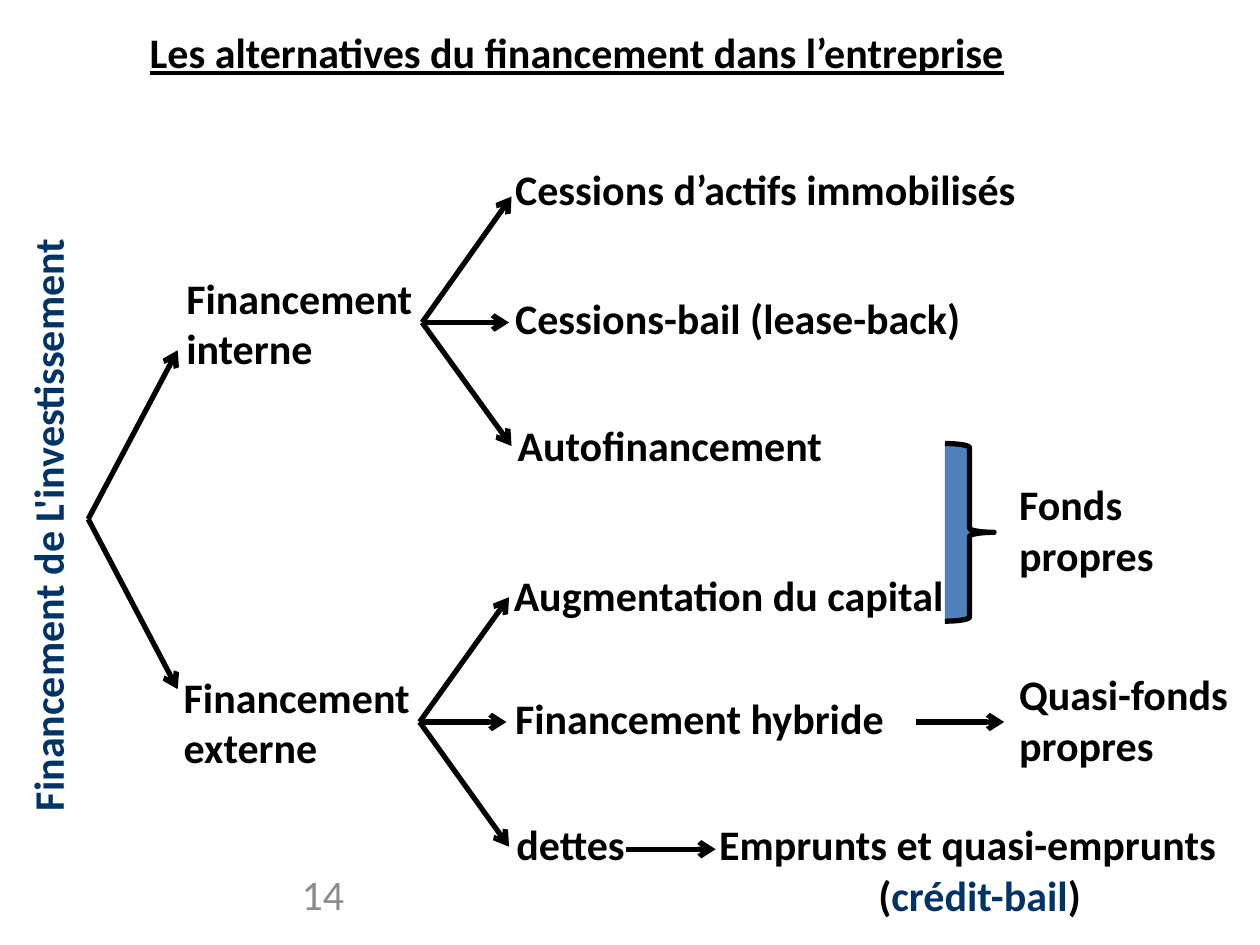
from dataclasses import dataclass
from lxml.etree import SubElement
from pptx import Presentation
from pptx.dml.color import RGBColor
from pptx.enum.shapes import MSO_CONNECTOR, MSO_SHAPE
from pptx.enum.text import MSO_ANCHOR, MSO_AUTO_SIZE, PP_ALIGN
from pptx.oxml.ns import qn
from pptx.util import Pt

SCALE = 9144
BLACK, NAVY, GRAY, BLUE = "000000", "003366", "8C8C8C", "4F81BD"
LEFT, MID, RIGHT = PP_ALIGN.LEFT, PP_ALIGN.CENTER, PP_ALIGN.RIGHT


@dataclass(frozen=True)
class Run:
    """A piece of text in one colour."""
    text: str
    color: str = BLACK


@dataclass(frozen=True)
class Para:
    """A line of runs with its alignment."""
    runs: tuple[Run, ...]
    align: PP_ALIGN = LEFT


@dataclass(frozen=True)
class Label:
    """A text box with its place and style."""
    x: int
    y: int
    w: int
    h: int
    paras: tuple[Para, ...]
    wrap: bool = True
    bold: bool = True
    under: bool = False
    turn: int = 0
    grow: bool = True
    anchor: MSO_ANCHOR = MSO_ANCHOR.TOP


@dataclass(frozen=True)
class Fan:
    """Arrows that leave one root for several tips."""
    root: tuple[int, int]
    tips: tuple[tuple[int, int], ...]


def px(n: int) -> int:
    """Turn px into EMU."""
    return n * SCALE


def rgb(code: str) -> RGBColor:
    """Turn a hex string into a colour."""
    return RGBColor.from_string(code)


def plain(*lines: str) -> tuple[Para, ...]:
    """Make one black paragraph of each line."""
    return tuple(Para((Run(line),)) for line in lines)


def write(slide, label: Label) -> None:
    """Draw a label run by run."""
    box = slide.shapes.add_textbox(px(label.x), px(label.y), px(label.w), px(label.h))
    box.rotation = label.turn
    frame = box.text_frame
    frame.word_wrap = label.wrap
    frame.auto_size = MSO_AUTO_SIZE.SHAPE_TO_FIT_TEXT if label.grow else MSO_AUTO_SIZE.NONE
    frame.vertical_anchor = label.anchor
    for i, para in enumerate(label.paras):
        line = frame.add_paragraph() if i else frame.paragraphs[0]
        line.alignment = para.align
        for part in para.runs:
            run = line.add_run()
            run.text = part.text
            font = run.font
            font.name, font.size = "Calibri", Pt(24)
            font.bold, font.underline = label.bold, label.under
            font.color.rgb = rgb(part.color)


def ink(line) -> None:
    """Give a line its colour and width."""
    line.color.rgb = rgb(BLACK)
    line.width = Pt(3)


def spread(slide, fan: Fan) -> None:
    """Draw the arrows of a fan."""
    for tip in fan.tips:
        arrow = slide.shapes.add_connector(MSO_CONNECTOR.STRAIGHT, *map(px, fan.root + tip))
        ink(arrow.line)
        SubElement(arrow.line._get_or_add_ln(), qn("a:tailEnd"), type="arrow")
        SubElement(arrow._element.spPr, qn("a:effectLst"))


def brace(slide, x: int, y: int, w: int, h: int) -> None:
    """Draw the brace that joins the equity sources."""
    shape = slide.shapes.add_shape(MSO_SHAPE.RIGHT_BRACE, px(x), px(y), px(w), px(h))
    shape.shadow.inherit = False
    shape.fill.solid()
    shape.fill.fore_color.rgb = rgb(BLUE)
    ink(shape.line)


LABELS = (
    Label(50, 683, 233, 52, (Para((Run("14", GRAY),), RIGHT),),
          bold=False, grow=False, anchor=MSO_ANCHOR.MIDDLE),
    Label(109, 16, 766, 50, plain("Les alternatives du financement dans l’entreprise"), under=True),
    Label(-204, 387, 483, 50, (Para((Run("Financement de L'investissement", NAVY),)),),
          wrap=False, turn=270),
    Label(138, 211, 209, 91, plain("Financement interne")),
    Label(136, 528, 209, 91, plain("Financement externe")),
    Label(399, 125, 437, 50, plain("Cessions d’actifs immobilisés")),
    Label(399, 227, 390, 50, plain("Cessions-bail (lease-back)")),
    Label(401, 328, 265, 50, plain("Autofinancement"), wrap=False),
    Label(398, 447, 437, 50, plain("Augmentation du capital")),
    Label(399, 545, 316, 50, plain("Financement hybride"), wrap=False),
    Label(400, 645, 108, 50, plain("dettes"), wrap=False),
    Label(799, 375, 128, 91, plain("Fonds", "propres"), wrap=False),
    Label(799, 526, 188, 91, plain("Quasi-fonds", "propres"), wrap=False),
    Label(561, 645, 433, 91, plain("Emprunts et quasi-emprunts")
          + (Para((Run("("), Run("crédit-bail", NAVY), Run(")")), MID),)),
)
FANS = (
    Fan((70, 412), ((141, 278), (141, 547))),
    Fan((335, 256), ((406, 156), (404, 256), (406, 354))),
    Fan((333, 573), ((404, 474), (402, 573), (404, 672))),
    Fan((727, 573), ((797, 573),)),
    Fan((497, 674), ((568, 674),)),
)


def main() -> None:
    """Build the slide and save it."""
    deck = Presentation()
    deck.slide_width, deck.slide_height = px(1000), px(750)
    slide = deck.slides.add_slide(deck.slide_layouts[6])
    brace(slide, 750, 352, 39, 141)
    for fan in FANS:
        spread(slide, fan)
    for label in LABELS:
        write(slide, label)
    deck.save("out.pptx")


if __name__ == "__main__":
    main()
